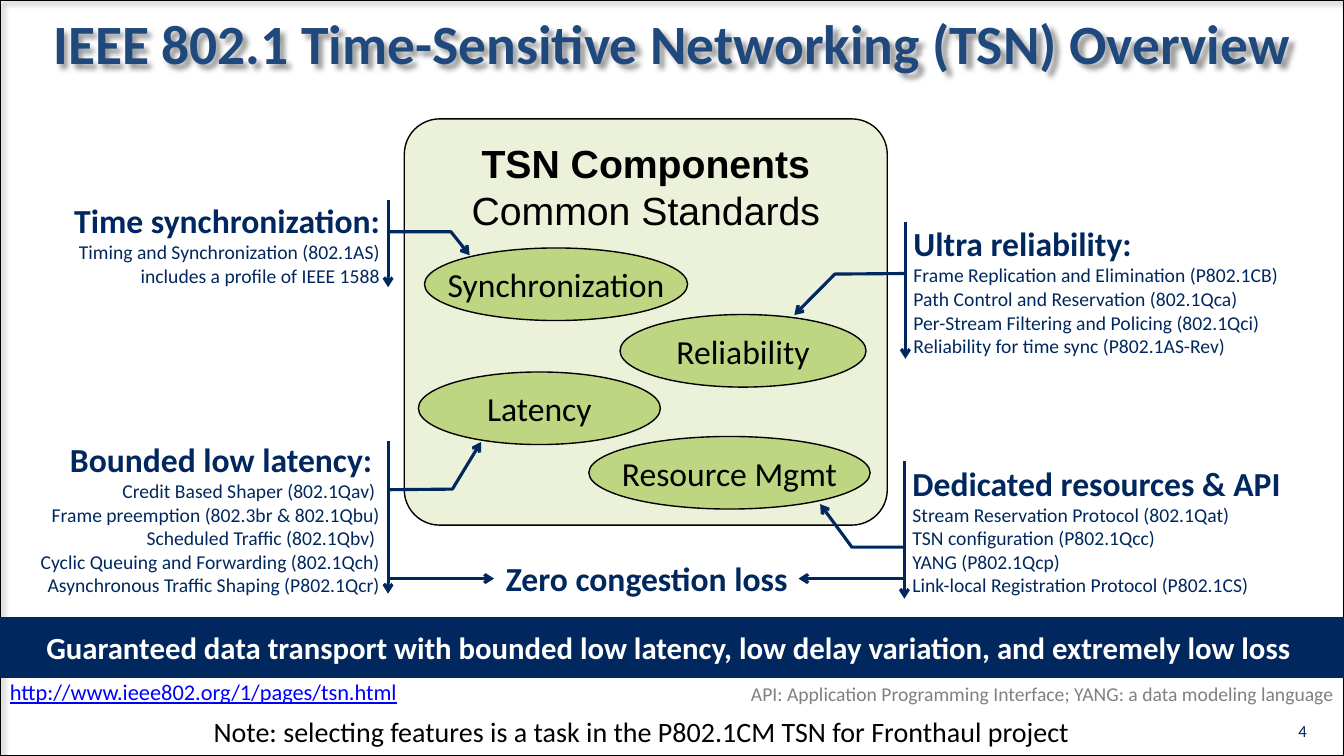
import dataclasses

import pptx
import pptx.dml.color
import pptx.enum.shapes
import pptx.enum.text
import pptx.oxml
import pptx.oxml.ns
import pptx.util
from pptx.util import Inches

SHAPES = pptx.enum.shapes.MSO_SHAPE
ALIGN = pptx.enum.text.PP_ALIGN
ANCHOR = pptx.enum.text.MSO_ANCHOR
FIT = pptx.enum.text.MSO_AUTO_SIZE


@dataclasses.dataclass(frozen=True)
class Theme:
    body_font: str = "Calibri"
    panel_font: str = "Arial"
    navy: str = "00285F"
    number: str = "002060"
    title: str = "1F497D"
    black: str = "000000"
    white: str = "FFFFFF"
    panel: str = "EBF2D9"
    oval: str = "BED682"
    link: str = "0000FF"
    gray: str = "808080"
    title_size: float = 39.6
    panel_size: int = 28
    heading_size: int = 24
    banner_size: int = 22
    note_size: int = 20
    link_size: int = 16
    detail_size: int = 14
    number_size: int = 12
    thin: int = 1
    frame: float = 1.5
    thick: float = 2.25


def rgb(value):
    return pptx.dml.color.RGBColor.from_string(value)


def draw_element(xml):
    return pptx.oxml.parse_xml(xml.replace("/>", f" {pptx.oxml.ns.nsdecls('a')}/>", 1)
                               if xml.endswith("/>") and xml.count("<") == 1
                               else xml.replace(">", f" {pptx.oxml.ns.nsdecls('a')}>", 1))


class OverviewSlide:
    def __init__(self, deck, theme):
        self.theme = theme
        self.shapes = deck.slides.add_slide(deck.slide_layouts[6]).shapes

    def style(self, para, size, color, bold=False, align=ALIGN.LEFT, font=None):
        para.alignment = align
        para.font.name = font or self.theme.body_font
        para.font.size = pptx.util.Pt(size)
        para.font.color.rgb = rgb(color)
        para.font.bold = bold

    def shape(self, kind, area, fill, line, width):
        shape = self.shapes.add_shape(kind, *map(Inches, area))
        shape.shadow.inherit = False
        if fill:
            shape.fill.solid()
            shape.fill.fore_color.rgb = rgb(fill)
        else:
            shape.fill.background()
        shape.line.color.rgb = rgb(line)
        shape.line.width = pptx.util.Pt(width)
        return shape

    def frame(self, shape, wrap=False, anchor=ANCHOR.MIDDLE):
        frame = shape.text_frame
        frame.word_wrap = wrap
        frame.vertical_anchor = anchor
        frame.margin_left = frame.margin_right = Inches(0.08)
        frame.margin_top = frame.margin_bottom = Inches(0.05)
        return frame

    def cast_shadow(self, shape):
        shape.shadow.inherit = False
        effects = shape._element.spPr.find(pptx.oxml.ns.qn("a:effectLst"))
        effects.append(draw_element(
            '<a:outerShdw blurRad="50800" dist="38100" dir="2700000" algn="tl" rotWithShape="0">'
            '<a:srgbClr val="000000"><a:alpha val="40000"/></a:srgbClr></a:outerShdw>'))

    def arrowhead(self, shape):
        shape.line._get_or_add_ln().append(draw_element('<a:tailEnd type="arrow"/>'))

    def text(self, area, words, size, color, bold=False, align=ALIGN.LEFT, wrap=False):
        box = self.shapes.add_textbox(*map(Inches, area))
        box.text_frame.word_wrap = wrap
        box.text_frame.auto_size = FIT.SHAPE_TO_FIT_TEXT
        para = box.text_frame.paragraphs[0]
        para.text = words
        self.style(para, size, color, bold, align)
        return box

    def title(self, words):
        box = self.text((0, 0, 13.33, 0.84), words, self.theme.title_size,
                        self.theme.title, True, ALIGN.CENTER, True)
        box.text_frame.auto_size = FIT.NONE
        box.text_frame.vertical_anchor = ANCHOR.MIDDLE
        self.cast_shadow(box)

    def page_border(self):
        border = self.shape(SHAPES.RECTANGLE, (0, 0, 13.33, 7.5), None,
                            self.theme.black, self.theme.frame)
        self.cast_shadow(border)

    def panel(self, area, heading, subtitle):
        shape = self.shape(SHAPES.ROUNDED_RECTANGLE, area, self.theme.panel,
                           self.theme.black, self.theme.thin)
        shape.adjustments[0] = 0.087
        frame = self.frame(shape, anchor=ANCHOR.TOP)
        frame.margin_top = Inches(0.1)
        para = frame.paragraphs[0]
        self.style(para, self.theme.panel_size, self.theme.black,
                   align=ALIGN.CENTER, font=self.theme.panel_font)
        span = para.add_run()
        span.text = heading
        span.font.bold = True
        para.add_line_break()
        para.add_run().text = subtitle

    def label(self, kind, area, words, size, color, fill, line, width, bold=False):
        """Draw a filled shape with one centred line of text."""
        shape = self.shape(kind, area, fill, line, width)
        para = self.frame(shape).paragraphs[0]
        para.text = words
        self.style(para, size, color, bold, ALIGN.CENTER)

    def oval(self, area, words):
        self.label(SHAPES.OVAL, area, words, self.theme.heading_size, self.theme.black,
                   self.theme.oval, self.theme.black, self.theme.thin)

    def callout(self, area, leader, heading, details, mirrored=False):
        """Draw a bar callout; leader lists y, x of its three points as fractions."""
        shape = self.shape(SHAPES.LINE_CALLOUT_2_ACCENT_BAR, area, self.theme.white,
                           self.theme.navy, self.theme.thick)
        for index, value in enumerate(leader):
            shape.adjustments[index] = value
        self.arrowhead(shape)
        if mirrored:
            shape._element.spPr.xfrm.set("flipH", "1")
        para = self.frame(shape, wrap=True).paragraphs[0]
        self.style(para, self.theme.detail_size, self.theme.navy,
                   align=ALIGN.RIGHT if mirrored else ALIGN.LEFT)
        span = para.add_run()
        span.text = heading
        span.font.size = pptx.util.Pt(self.theme.heading_size)
        span.font.bold = True
        for detail in details:
            para.add_line_break()
            para.add_run().text = detail

    def arrow(self, start, end, height):
        line = self.shapes.add_connector(pptx.enum.shapes.MSO_CONNECTOR.STRAIGHT,
                                         *map(Inches, (start, height, end, height)))
        line.line.color.rgb = rgb(self.theme.navy)
        line.line.width = pptx.util.Pt(self.theme.thick)
        self.arrowhead(line)
        line._element.spPr.append(draw_element("<a:effectLst/>"))


def main():
    deck = pptx.Presentation()
    deck.slide_width, deck.slide_height = Inches(13.33), Inches(7.5)
    theme = Theme()
    slide = OverviewSlide(deck, theme)

    slide.page_border()
    slide.text((12.66, 7.1, 0.4, 0.3), "4", theme.number_size, theme.number, align=ALIGN.RIGHT)
    slide.title("IEEE 802.1 Time-Sensitive Networking (TSN) Overview")
    slide.panel((4.01, 1.18, 4.79, 4.03), "TSN Components", "Common Standards")
    for left, top, width, words in ((4.21, 2.46, 2.61, "Synchronization"),
                                    (6.15, 3.12, 2.44, "Reliability"),
                                    (4.15, 3.69, 2.4, "Latency"),
                                    (5.84, 4.33, 2.79, "Resource Mgmt")):
        slide.oval((left, top, width, 0.72), words)

    slide.callout((0.12, 1.98, 3.73, 0.87), (0.367, 0, 0.367, -0.167, 0.636, -0.217),
                  "Time synchronization:",
                  ("Timing and Synchronization (802.1AS) includes a profile of IEEE 1588",),
                  mirrored=True)
    slide.callout((0.12, 4.38, 3.73, 1.51), (0.317, 0, 0.313, -0.171, 0.004, -0.247),
                  "Bounded low latency: ",
                  ("Credit Based Shaper (802.1Qav) ", "Frame preemption (802.3br & 802.1Qbu)",
                   "Scheduled Traffic (802.1Qbv) ",
                   "Cyclic Queuing and Forwarding (802.1Qch) "
                   "Asynchronous Traffic Shaping (P802.1Qcr)"), mirrored=True)
    slide.callout((8.98, 2.2, 4.19, 1.36), (0.378, 0, 0.382, -0.167, 0.681, -0.263),
                  "Ultra reliability:",
                  ("Frame Replication and Elimination (P802.1CB)",
                   "Path Control and Reservation (802.1Qca)",
                   "Per-Stream Filtering and Policing (802.1Qci)",
                   "Reliability for time sync (P802.1AS-Rev)"))
    slide.callout((8.97, 4.57, 4.2, 1.37), (0.627, 0, 0.627, -0.124, 0.315, -0.199),
                  "Dedicated resources & API",
                  ("Stream Reservation Protocol (802.1Qat)", "TSN configuration (P802.1Qcc)",
                   "YANG (P802.1Qcp)", "Link-local Registration Protocol (P802.1CS)"))

    slide.text((4.9, 5.49, 3.03, 0.5), "Zero congestion loss", theme.heading_size,
               theme.navy, True, ALIGN.CENTER)
    slide.arrow(3.86, 4.9, 5.74)
    slide.arrow(8.97, 7.92, 5.74)
    slide.label(SHAPES.RECTANGLE, (0, 6.14, 13.33, 0.57),
                "Guaranteed data transport with bounded low latency, low delay variation, "
                "and extremely low loss ", theme.banner_size, theme.white,
                theme.navy, theme.navy, theme.thick, bold=True)
    address = slide.text((0, 6.68, 4.09, 0.37), "http://www.ieee802.org/1/pages/tsn.html",
                         theme.link_size, theme.link)
    address.text_frame.paragraphs[0].font.underline = True
    slide.text((7.33, 6.72, 6, 0.34),
               "API: Application Programming Interface; YANG: a data modeling language",
               theme.detail_size, theme.gray, align=ALIGN.RIGHT, wrap=True)
    slide.text((2.02, 7.04, 8.77, 0.44),
               "Note: selecting features is a task in the P802.1CM TSN for Fronthaul project",
               theme.note_size, theme.black)
    deck.save("out.pptx")


if __name__ == "__main__":
    main()
